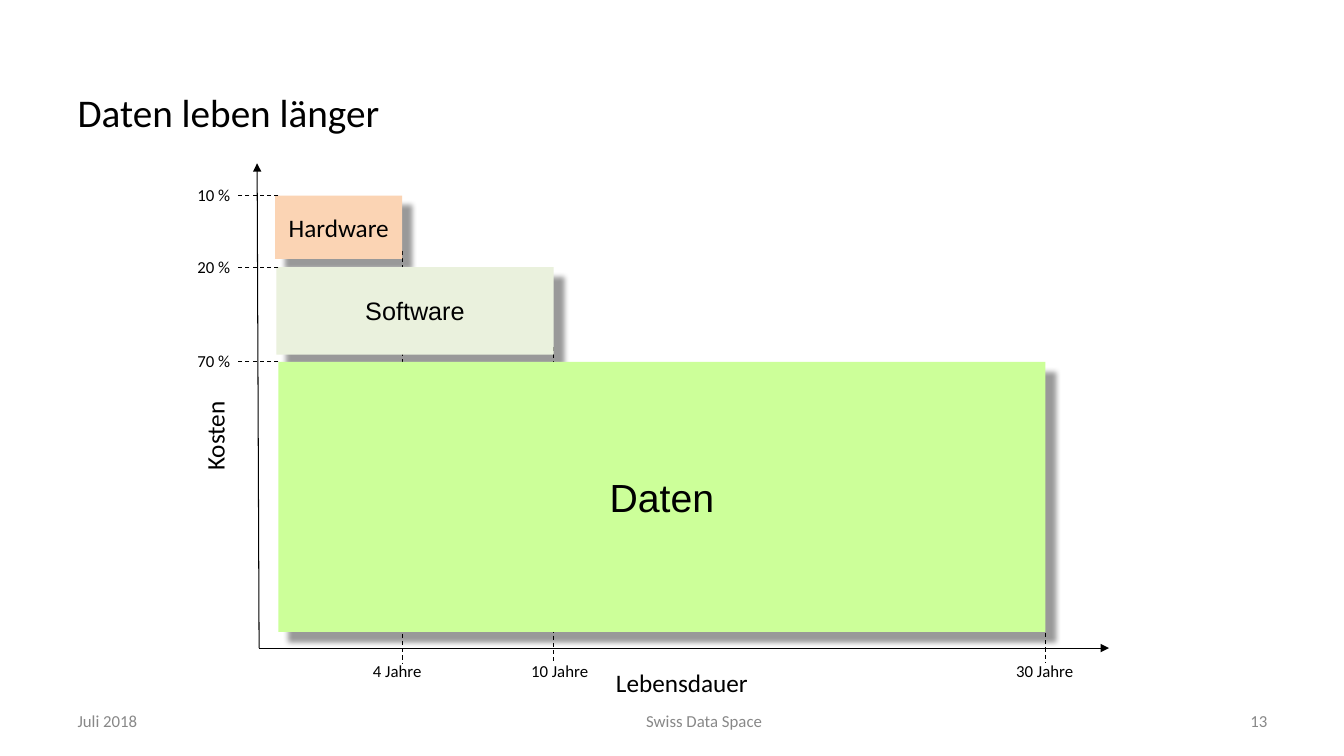
from dataclasses import dataclass

from lxml.etree import SubElement
from pptx import Presentation
from pptx.dml.color import RGBColor
from pptx.enum.dml import MSO_LINE
from pptx.enum.shapes import MSO_CONNECTOR, MSO_SHAPE
from pptx.enum.text import MSO_ANCHOR, MSO_AUTO_SIZE, PP_ALIGN
from pptx.oxml.ns import qn
from pptx.util import Inches, Pt


@dataclass(frozen=True)
class Theme:
    ink: str = "000000"
    muted: str = "888888"
    hardware: str = "FBD4B4"
    software: str = "EAF1DD"
    data: str = "CCFF99"
    font: str = "Calibri"
    alt_font: str = "Arial"
    large: int = 28
    medium: int = 18
    small: int = 12
    line: float = 0.75


T = Theme()
WIDTH, HEIGHT = Inches(13.33), Inches(7.5)

# Percentages of the slide's width (x) and height (y)
AXIS_X, AXIS_Y = 19.28, 85.73
TICK_X, TICK_END_X = 17.55, 20.71
DROP_END_Y = 87.73
LABEL_H, TITLE_H = 4, 5.33

# text, left, top, right, bottom, fill, font, size
BLOCKS = [
    ("Hardware", 20.48, 25.87, 29.93, 34.27, T.hardware, T.font, T.medium),
    ("Software", 20.56, 35.33, 41.19, 46.93, T.software, T.alt_font, T.medium),
    ("Daten", 20.71, 47.87, 77.79, 83.6, T.data, T.alt_font, T.large),
]
SHARES = ["10 %", "20 %", "70 %"]
# text, label left, label width, start of the drop line
LIFETIMES = [
    ("4 Jahre", 27.01, 5.2, 33.2),
    ("10 Jahre", 38.78, 5.78, 45.87),
    ("30 Jahre", 74.87, 5.78, 83.73),
]
# text, left, width, alignment
FOOTERS = [
    ("Juli 2018", 5.03, 23.33, PP_ALIGN.LEFT),
    ("Swiss Data Space", 31.13, 42.53, PP_ALIGN.CENTER),
    ("13", 80.72, 14.33, PP_ALIGN.RIGHT),
]


def px(share):
    """Length for a percentage of the slide's width."""
    return round(WIDTH * share / 100)


def py(share):
    """Length for a percentage of the slide's height."""
    return round(HEIGHT * share / 100)


def frame(left, top, width, height):
    return px(left), py(top), px(width), py(height)


def write(sp, text, size, font=T.font, color=T.ink, align=PP_ALIGN.LEFT,
          anchor=MSO_ANCHOR.TOP, wrap=True):
    tf = sp.text_frame
    tf.auto_size = MSO_AUTO_SIZE.NONE
    tf.word_wrap = wrap
    tf.vertical_anchor = anchor
    p = tf.paragraphs[0]
    p.alignment = align
    r = p.add_run()
    r.text = text
    r.font.size = Pt(size)
    r.font.name = font
    r.font.color.rgb = RGBColor.from_string(color)


def add_title(s, text):
    sp = s.shapes.title
    sp.left, sp.top, sp.width, sp.height = frame(5.03, 4, 90, 14.53)
    write(sp, text, T.large, anchor=MSO_ANCHOR.BOTTOM)


def add_label(s, text, left, top, width, height, size, rotation=0):
    sp = s.shapes.add_textbox(*frame(left, top, width, height))
    sp.rotation = rotation
    write(sp, text, size, wrap=False)


def add_footer(s, text, left, width, align):
    sp = s.shapes.add_textbox(*frame(left, 92.67, width, TITLE_H))
    write(sp, text, T.small, color=T.muted, align=align,
          anchor=MSO_ANCHOR.MIDDLE)


def add_line(s, x1, y1, x2, y2, dashed=False, arrow=False):
    cx = s.shapes.add_connector(MSO_CONNECTOR.STRAIGHT,
                                px(x1), py(y1), px(x2), py(y2))
    cx.line.color.rgb = RGBColor.from_string(T.ink)
    cx.line.width = Pt(T.line)
    if dashed:
        cx.line.dash_style = MSO_LINE.DASH
    spPr = cx._element.spPr
    if arrow:
        SubElement(spPr.find(qn("a:ln")), qn("a:tailEnd"), type="triangle")
    SubElement(spPr, qn("a:effectLst"))


def add_shadow(sp):
    sp.shadow.inherit = False
    effects = sp._element.spPr.find(qn("a:effectLst"))
    outer = SubElement(effects, qn("a:outerShdw"), blurRad=str(Pt(4)),
                       dist=str(Pt(10)), dir=str(45 * 60000),
                       algn="tl", rotWithShape="0")
    color = SubElement(outer, qn("a:srgbClr"), val=T.ink)
    SubElement(color, qn("a:alpha"), val="40000")


def add_block(s, text, left, top, right, bottom, fill, font, size):
    sp = s.shapes.add_shape(MSO_SHAPE.RECTANGLE,
                            *frame(left, top, right - left, bottom - top))
    sp.fill.solid()
    sp.fill.fore_color.rgb = RGBColor.from_string(fill)
    sp.line.fill.background()
    add_shadow(sp)
    write(sp, text, size, font, align=PP_ALIGN.CENTER,
          anchor=MSO_ANCHOR.MIDDLE)


def main():
    prs = Presentation()
    prs.slide_width, prs.slide_height = WIDTH, HEIGHT
    s = prs.slides.add_slide(prs.slide_layouts[5])
    add_title(s, "Daten leben länger")
    for footer in FOOTERS:
        add_footer(s, *footer)

    # Drop lines lie behind the blocks
    for block, (text, left, width, start) in zip(BLOCKS, LIFETIMES):
        right = block[3]
        add_line(s, right, start, right, DROP_END_Y, dashed=True)
        add_label(s, text, left, 86.8, width, LABEL_H, T.small)
    for block in BLOCKS:
        add_block(s, *block)

    add_line(s, AXIS_X, AXIS_Y, 82.52, AXIS_Y, arrow=True)
    add_line(s, AXIS_X, AXIS_Y, 19.13, 21.6, arrow=True)
    add_label(s, "Lebensdauer", 45.09, 87.6, 11.48, TITLE_H, T.medium)
    add_label(s, "Kosten", 12.6, 54.93, 6.75, TITLE_H, T.medium, rotation=270)

    for block, text in zip(BLOCKS, SHARES):
        top = block[2]
        add_line(s, TICK_END_X, top, TICK_X, top, dashed=True)
        add_label(s, text, 13.95, top - 2.07, 3.98, LABEL_H, T.small)

    prs.save("out.pptx")


if __name__ == "__main__":
    main()
